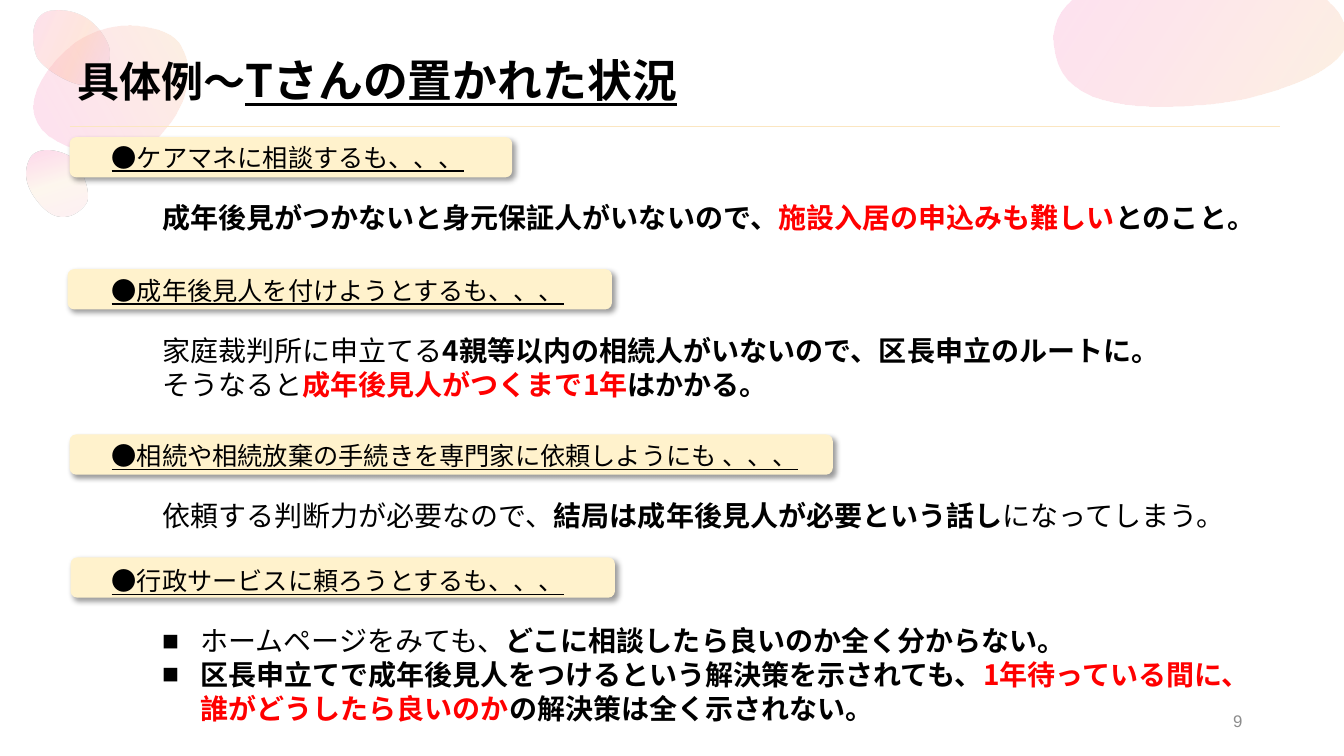
from math import cos, radians, sin

from lxml import etree
from pptx import Presentation, util as u
from pptx.dml.color import RGBColor
from pptx.enum import shapes, text
from pptx.oxml.ns import qn

# The grid: square cells, 13.33 columns by 7.5 rows
CELL = u.Inches(1)
COLS, ROWS = 13.33, 7.5
FONT = "Noto Sans CJK JP"
INK = {"text": "000000", "alert": "FF0000", "bar": "FFF2CC", "page": "8C8C8C",
       "pink": "FDA9D9", "cream": "FBE6C1", "blush": "FEE4F0",
       "ivory": "FDF3E5", "peach": "FEBFA1", "lilac": "E5B0F6"}
HEAD_X, BODY_X, BODY_W, BODY_DY = 1.01, 1.51, 11.03, 0.58
BAR_H = 0.4

# Run styles: "b" bold, "r" red, "u" underlined
# Topic: bar (left, top, width), heading (top, width, words), body height, bulleted, lines
TOPICS = [
    ((0.69, 1.36, 4.39), (1.36, 6.69, "●ケアマネに相談するも、、、"), 0.44, False,
     [[("成年後見がつかないと身元保証人がいないので、", "b"),
       ("施設入居の申込みも難しい", "br"), ("とのこと。", "b")]]),
    ((0.67, 2.67, 5.4), (2.68, 6.69, "●成年後見人を付けようとするも、、、"), 0.77, False,
     [[("家庭裁判所に申立てる", ""),
       ("4親等以内の相続人がいないので、区長申立のルートに。", "b")],
      [("そうなると", ""), ("成年後見人がつくまで1年", "br"), ("はかかる。", "b")]]),
    ((0.69, 4.31, 7.57),
     (4.32, 7.91, "●相続や相続放棄の手続きを専門家に依頼しようにも 、、、"), 0.44, False,
     [[("依頼する判断力が必要なので、", ""),
       ("結局は成年後見人が必要という話し", "b"), ("になってしまう。", "")]]),
    ((0.7, 5.53, 5.4), (5.56, 7.91, "●行政サービスに頼ろうとするも、、、"), 1.11, True,
     [[("ホームページをみても、", ""),
       ("どこに相談したら良いのか全く分からない。", "b")],
      [("区長申立てで成年後見人をつけるという解決策を示されても、", "b"),
       ("1年待っている間に、誰がどうしたら良いのか", "br"),
       ("の解決策は全く示されない。", "b")]]),
]

# Petal: box, turn, outline (start, then two controls and an end per curve), gradient stops
PETALS = [
    ((0.22, 1.52, 0.69, 0.59), 207.7,
     [(0.86, 2), (0.82, 2.08), (0.63, 2.24), (0.44, 2.06), (0.25, 1.88), (0.23, 1.7),
      (0.3, 1.57), (0.37, 1.44), (0.61, 1.49), (0.71, 1.56), (0.8, 1.63), (0.91, 1.91),
      (0.86, 2)],
     [(0, "blush", 63), (50, "ivory", 63), (100, "pink", 52)]),
    ((0.43, 0.16, 1.36, 1.42), 285.8,
     [(0.91, 1.52), (0.38, 1.4), (0.17, 1.13), (0.47, 0.7), (0.77, 0.27), (1.2, 0.19),
      (1.56, 0.29), (1.93, 0.39), (1.89, 0.85), (1.78, 1.05), (1.67, 1.26), (1.44, 1.63),
      (0.91, 1.52)],
     [(0, "pink", 36), (100, "cream", 48)]),
    ((0.36, 0.06, 0.68, 0.81), 338.3,
     [(0.37, 0.56), (0.32, 0.43), (0.29, 0.11), (0.56, 0.11), (0.82, 0.1), (0.99, 0.26),
      (1.07, 0.45), (1.14, 0.64), (0.96, 0.82), (0.85, 0.84), (0.73, 0.86), (0.42, 0.68),
      (0.37, 0.56)],
     [(0, "pink", 36), (57, "peach", 37), (100, "lilac", 24)]),
    ((10.46, -0.37, 2.88, 1.42), 348.2,
     [(10.49, 0.62), (10.31, 0.11), (10.68, -0.26), (11.74, -0.31), (12.8, -0.35),
      (13.28, -0.05), (13.36, 0.32), (13.44, 0.69), (12.53, 0.97), (12.05, 1.02),
      (11.57, 1.07), (10.67, 1.13), (10.49, 0.62)],
     [(0, "pink", 36), (100, "cream", 48)]),
]


def cells(*nums):
    return [round(n * CELL) for n in nums]


def rgb(name):
    return RGBColor.from_string(INK[name])


def node(parent, tag, **attrs):
    return etree.SubElement(parent, qn("a:" + tag), {k: str(v) for k, v in attrs.items()})


def tint(parent, name, alpha):
    """Add a colour with an opacity in percent."""
    node(node(parent, "srgbClr", val=INK[name]), "alpha", val=alpha * 1000)


def unturn(spot, box, turn):
    """Take a point back to where it lies before its box is turned."""
    left, top, wide, tall = box
    mid_x, mid_y = left + wide / 2, top + tall / 2
    dx, dy, arc = spot[0] - mid_x, spot[1] - mid_y, radians(-turn)
    return cells(mid_x + dx * cos(arc) - dy * sin(arc), mid_y + dx * sin(arc) + dy * cos(arc))


def bend(shape, box):
    """Fit the outline to its box and join each three segments into one curve."""
    left, top, wide, tall = cells(*box)
    track = next(shape.element.iter(qn("a:path")))
    for spot in track.iter(qn("a:pt")):
        spot.set("x", str(int(spot.get("x")) + shape.left - left))
        spot.set("y", str(int(spot.get("y")) + shape.top - top))
    track.set("w", str(wide))
    track.set("h", str(tall))
    shape.left, shape.top, shape.width, shape.height = left, top, wide, tall
    legs = track.findall(qn("a:lnTo"))
    for i in range(0, len(legs), 3):
        arc = etree.Element(qn("a:cubicBezTo"))
        legs[i].addprevious(arc)
        for leg in legs[i:i + 3]:
            arc.append(leg[0])
            track.remove(leg)


def petal(slide, box, turn, spots, stops):
    start, *rest = [unturn(spot, box, turn) for spot in spots]
    pen = slide.shapes.build_freeform(*start, scale=1.0)
    pen.add_line_segments(rest, close=True)
    shape = pen.convert_to_shape()
    bend(shape, box)
    shape.rotation = turn
    shape.shadow.inherit = False
    shape.line.fill.background()
    grad = etree.Element(qn("a:gradFill"), rotWithShape="1")
    row = node(grad, "gsLst")
    for pos, name, alpha in stops:
        tint(node(row, "gs", pos=pos * 1000), name, alpha)
    node(grad, "lin", ang=45 * 60000, scaled=0)
    shape.element.spPr.find(qn("a:custGeom")).addnext(grad)


def rule(slide, left, right, top):
    line = slide.shapes.add_connector(
        shapes.MSO_CONNECTOR.STRAIGHT, *cells(left, top, right, top))
    line.line.color.rgb = rgb("cream")
    line.line.width = u.Pt(0.5)
    node(line.element.spPr, "effectLst")


def bar(slide, left, top, width):
    shape = slide.shapes.add_shape(
        shapes.MSO_SHAPE.ROUNDED_RECTANGLE, *cells(left, top, width, BAR_H))
    shape.fill.solid()
    shape.fill.fore_color.rgb = rgb("bar")
    shape.line.fill.background()
    shape.shadow.inherit = False
    glow = node(shape.element.spPr.find(qn("a:effectLst")), "outerShdw",
                blurRad=u.Pt(4), dist=u.Pt(3), dir=45 * 60000, algn="tl", rotWithShape=0)
    tint(glow, "text", 40)


def bullet(para):
    props = para._p.get_or_add_pPr()
    props.set("marL", str(u.Inches(0.38)))
    props.set("indent", str(u.Inches(-0.38)))
    props.insert(0, etree.Element(qn("a:buFont"), typeface="Arial"))
    props.insert(1, etree.Element(qn("a:buChar"), char="■"))


def write(slide, box, lines, size, font=FONT, color="text", middle=False, marks=False):
    """Add a text box and return its paragraphs."""
    frame = slide.shapes.add_textbox(*cells(*box)).text_frame
    frame.word_wrap = True
    if middle:
        frame.vertical_anchor = text.MSO_ANCHOR.MIDDLE
    for i, line in enumerate(lines):
        para = frame.add_paragraph() if i else frame.paragraphs[0]
        para.font.size = u.Pt(size)
        para.font.name = font
        for words, style in line:
            run = para.add_run()
            run.text = words
            run.font.bold = "b" in style
            run.font.underline = "u" in style
            run.font.color.rgb = rgb("alert" if "r" in style else color)
            node(run.font._element, "ea", typeface=font)
        if marks:
            bullet(para)
    return frame.paragraphs


def title(slide):
    line = [("具体例～", "b"), ("Tさんの置かれた状況", "bu")]
    para = write(slide, (0.67, 0.4, 12, 0.85), [line], 32, middle=True)[0]
    para.line_spacing = 0.9
    para.runs[0].font.size = u.Pt(30)


def topic(slide, strip, head, tall, marks, lines):
    top, wide, words = head
    bar(slide, *strip)
    write(slide, (HEAD_X, top, wide, BAR_H), [[(words, "u")]], 18)
    write(slide, (BODY_X, top + BODY_DY, BODY_W, tall), lines, 20, marks=marks)


def main():
    deck = Presentation()
    deck.slide_width, deck.slide_height = cells(COLS, ROWS)
    slide = deck.slides.add_slide(deck.slide_layouts[6])
    for item in PETALS:
        petal(slide, *item)
    rule(slide, 0.69, 12.7, 1.25)
    title(slide)
    for item in TOPICS:
        topic(slide, *item)
    page = write(slide, (9.42, 6.95, 3, 0.4), [[("9", "")]], 12, "Arial", "page", True)[0]
    page.alignment = text.PP_ALIGN.RIGHT
    deck.save("out.pptx")


if __name__ == "__main__":
    main()
